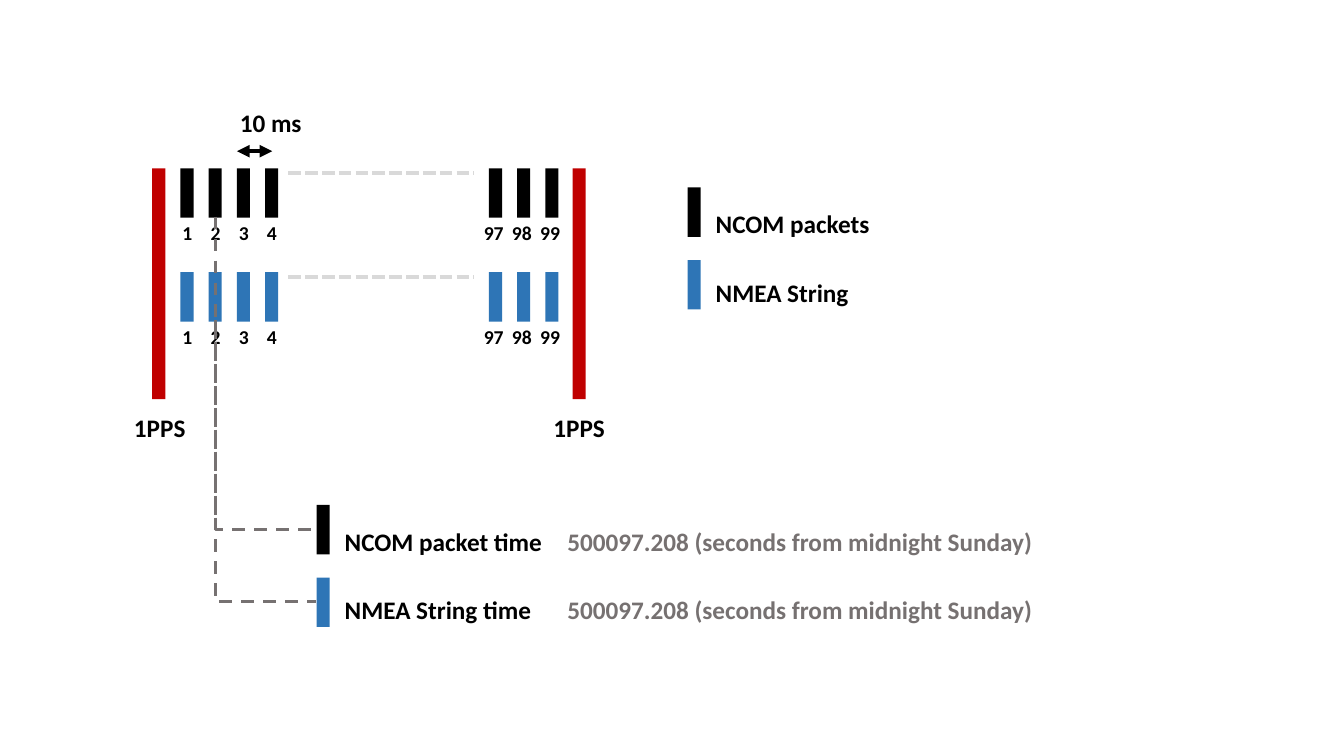
import dataclasses

import lxml.etree
import pptx
import pptx.dml.color
import pptx.enum.dml
import pptx.enum.shapes
import pptx.enum.text
import pptx.oxml.ns
import pptx.util

qn = pptx.oxml.ns.qn
DASH = pptx.enum.dml.MSO_LINE
LINK = pptx.enum.shapes.MSO_CONNECTOR


@dataclasses.dataclass(frozen=True)
class Theme:
    font: str = "Calibri"
    black: str = "000000"
    red: str = "C00000"
    blue: str = "2E75B6"
    gray: str = "767171"
    pale: str = "D9D9D9"
    label: int = 18
    small: int = 14
    thick: float = 3
    thin: float = 2.25


class Board:
    scale = 9144

    def __init__(self, deck, theme):
        self.theme = theme
        self.slide = deck.slides.add_slide(deck.slide_layouts[6])

    def emu(self, *spans):
        return [pptx.util.Emu(span * self.scale) for span in spans]

    def color(self, name):
        return pptx.dml.color.RGBColor.from_string(name)

    def bar(self, left, top, ink, high=49):
        kind = pptx.enum.shapes.MSO_SHAPE.RECTANGLE
        shape = self.slide.shapes.add_shape(kind, *self.emu(left, top, 13, high))
        shape.shadow.inherit = False
        shape.fill.solid()
        shape.fill.fore_color.rgb = self.color(ink)
        shape.line.fill.background()

    def text(self, words, left, top, wide, size, ink, high=40):
        box = self.slide.shapes.add_textbox(*self.emu(left, top, wide, high))
        frame = box.text_frame
        frame.word_wrap = True
        frame.auto_size = pptx.enum.text.MSO_AUTO_SIZE.SHAPE_TO_FIT_TEXT
        run = frame.paragraphs[0].add_run()
        run.text = words
        run.font.name = self.theme.font
        run.font.size = pptx.util.Pt(size)
        run.font.bold = True
        run.font.color.rgb = self.color(ink)

    def line(self, start, end, ink, width, dash=None, kind=LINK.STRAIGHT):
        link = self.slide.shapes.add_connector(kind, *self.emu(*start, *end))
        link.line.color.rgb = self.color(ink)
        link.line.width = pptx.util.Pt(width)
        if dash is not None:
            link.line.dash_style = dash
        lxml.etree.SubElement(link._element.spPr, qn("a:effectLst"))
        return link

    def arrow(self, start, end, ink, width):
        link = self.line(start, end, ink, width)
        stroke = link._element.spPr.find(qn("a:ln"))
        for tag in ("a:headEnd", "a:tailEnd"):
            lxml.etree.SubElement(stroke, qn(tag), type="triangle")

    def bend(self, start, end, ink, width):
        (left, top), (right, base) = start, end
        wide, high = right - left, base - top
        mid_x, mid_y = (left + right) // 2, (top + base) // 2
        head = (mid_x + high // 2, mid_y - wide // 2)
        tail = (head[0] - high, head[1] + wide)
        link = self.line(head, tail, ink, width, DASH.DASH, LINK.ELBOW)
        props = link._element.spPr
        props.find(qn("a:xfrm")).set("rot", "16200000")
        props.find(qn("a:prstGeom")).set("prst", "bentConnector2")


def main():
    deck = pptx.Presentation()
    deck.slide_width = pptx.util.Inches(13.33)
    deck.slide_height = pptx.util.Inches(7.5)
    theme = Theme()
    board = Board(deck, theme)

    for left in (151, 568):
        board.bar(left, 167, theme.red, 229)
    for left in (123, 539):
        board.text("1PPS", left, 404, 85, theme.label, theme.black)
    board.text("10 ms", 228, 102, 85, theme.label, theme.black)
    board.arrow((235, 150), (270, 150), theme.black, theme.thick)

    step = 28
    ticks = [(str(1 + i), 179 + step * i, 8) for i in range(4)]
    ticks += [(str(97 + i), 485 + step * i, 15) for i in range(3)]
    rows = (
        ("NCOM packets", "NCOM packet time", theme.black, 167),
        ("NMEA String", "NMEA String time", theme.blue, 270),
    )
    for i, (name, time, ink, top) in enumerate(rows):
        for mark, left, shift in ticks:
            board.bar(left, top, ink)
            board.text(mark, left - shift, top + 47, 43,
                       theme.small, theme.black, 34)
        board.line((286, top + 5), (470, top + 5), theme.pale,
                   theme.thick, DASH.SQUARE_DOT)
        for words, left, base in ((name, 682, 186), (time, 314, 501)):
            board.bar(left, base + 72 * i, ink)
            board.text(words, left + 18, base + 16 + 68 * i, 255,
                       theme.label, theme.black)
        board.text("500097.208 (seconds from midnight Sunday)",
                   553, 517 + 68 * i, 610, theme.label, theme.gray)

    for i, row in enumerate(rows):
        board.bend((214, row[3] + 48), (314, 525 + 72 * i),
                   theme.gray, theme.thin)

    deck.save("out.pptx")


if __name__ == "__main__":
    main()
